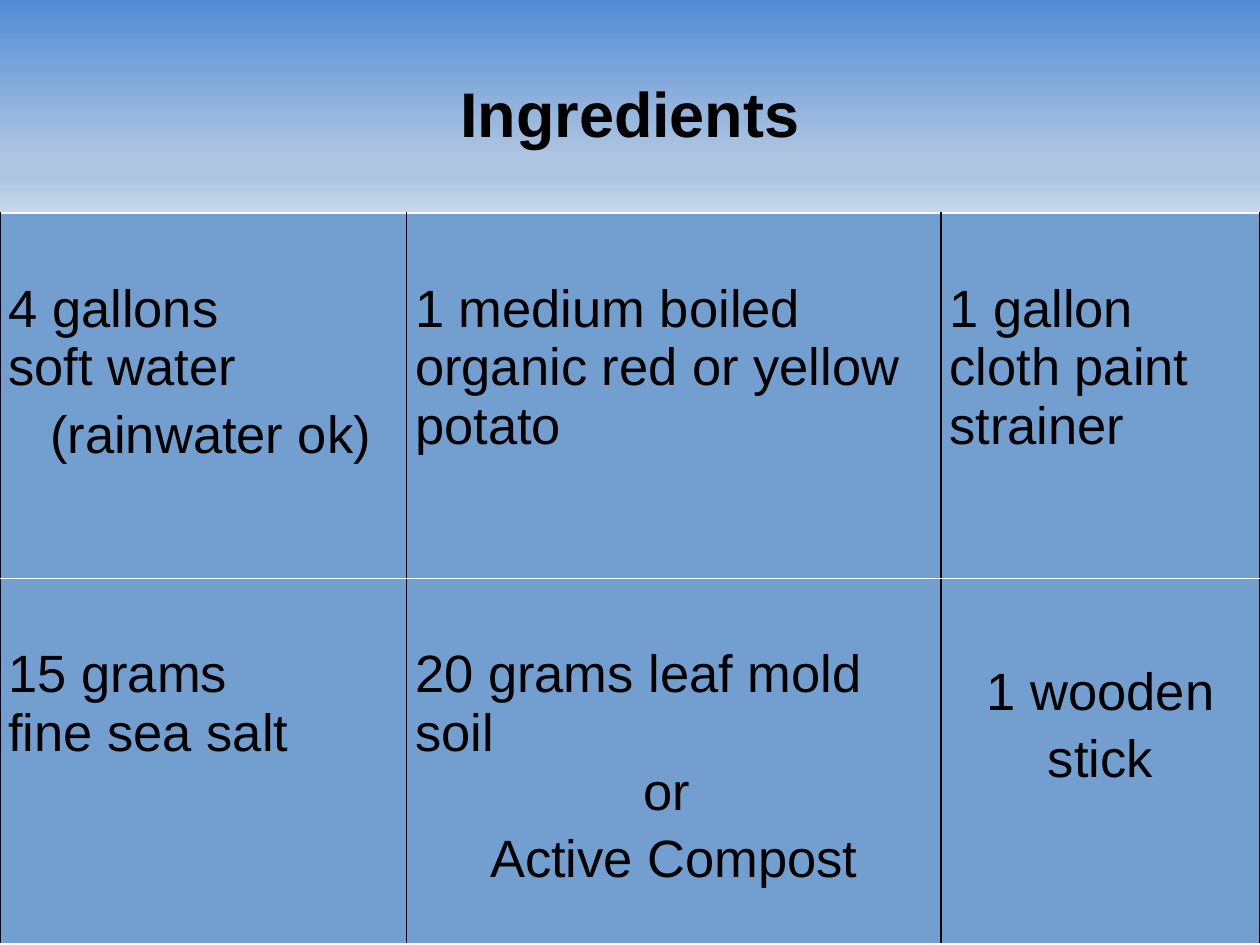
from lxml import etree
from pptx import Presentation
from pptx.dml.color import RGBColor
from pptx.enum.text import MSO_ANCHOR, MSO_AUTO_SIZE, PP_ALIGN
from pptx.oxml import parse_xml
from pptx.util import Cm, Pt

LEFT, CENTER = PP_ALIGN.LEFT, PP_ALIGN.CENTER
MIDDLE, NO_AUTOFIT = MSO_ANCHOR.MIDDLE, MSO_AUTO_SIZE.NONE
TITLE_ONLY = 5
NS = "http://schemas.openxmlformats.org/drawingml/2006/main"

COLORS = {"text": "000000", "cell": "729FCF", "side": "000000", "row": "FFFFFF"}
GRADIENT = [(0, "538CD5"), (74, "AEC5E1"), (83, "AEC5E1"), (100, "C8D8EB")]

TITLE = "Ingredients"
INGREDIENTS = [
    [
        [("4 gallons", LEFT, 1), ("soft water", LEFT, 1), (" (rainwater ok)", CENTER, 1.15)],
        [("1 medium boiled", LEFT, 1), ("organic red or yellow potato", LEFT, 1)],
        [("1 gallon cloth paint strainer", LEFT, 1)],
    ],
    [
        [("15 grams", LEFT, 1), ("fine sea salt", LEFT, 1)],
        [("20 grams leaf mold soil", LEFT, 1), ("or ", CENTER, 1), ("Active Compost", CENTER, 1.15)],
        [("1 wooden stick", CENTER, 1.15)],
    ],
]

SLIDE_WIDTH, SLIDE_HEIGHT = Cm(25.4), Cm(19.05)
TITLE_HEIGHT = Cm(4.29)
COLUMN_WIDTHS = [Cm(8.2), Cm(10.77), Cm(6.43)]
ROW_HEIGHT = Cm(7.37)
TOP_MARGINS = {1: Cm(1.35), 1.15: Cm(1.52)}
BORDERS = {"lnL": "side", "lnR": "side", "lnT": "row", "lnB": "row"}

TITLE_BOX = {"left": 0, "top": 0, "width": SLIDE_WIDTH, "height": TITLE_HEIGHT}
TITLE_FRAME = {
    "word_wrap": True, "auto_size": NO_AUTOFIT, "vertical_anchor": MIDDLE,
    "margin_left": Cm(0.25), "margin_right": Cm(0.25),
    "margin_top": Cm(0.25), "margin_bottom": Cm(0.25),
}
CELL_MARGINS = {"margin_left": Cm(0.17), "margin_right": Cm(0.17), "margin_bottom": Cm(0.13)}
TITLE_FONT = {"name": "Arial", "size": Pt(36), "bold": True}
CELL_FONT = {"name": "Arial", "size": Pt(30), "bold": False}


def apply(target, values):
    for key, value in values.items():
        setattr(target, key, value)


def write(paragraph, text, align, spacing, font):
    apply(paragraph, {"alignment": align, "line_spacing": spacing,
                      "space_before": Pt(0), "space_after": Pt(0)})
    run = paragraph.add_run()
    run.text = text
    apply(run.font, font)
    run.font.color.rgb = RGBColor.from_string(COLORS["text"])


def fill_gradient(shape):
    stops = "".join(
        f'<a:gs pos="{position * 1000}"><a:srgbClr val="{color}"/></a:gs>'
        for position, color in GRADIENT
    )
    gradient = parse_xml(
        f'<a:gradFill xmlns:a="{NS}" rotWithShape="1"><a:gsLst>{stops}</a:gsLst>'
        '<a:lin ang="5400000" scaled="0"/></a:gradFill>'
    )
    shape._element.spPr.append(gradient)


def add_borders(cell):
    properties = cell._tc.get_or_add_tcPr()
    for side, color in BORDERS.items():
        line = etree.SubElement(properties, f"{{{NS}}}{side}", w=str(Pt(0.96)))
        solid = etree.SubElement(line, f"{{{NS}}}solidFill")
        etree.SubElement(solid, f"{{{NS}}}srgbClr", val=COLORS[color])


def add_title(slide):
    title = slide.shapes.title
    apply(title, TITLE_BOX)
    apply(title.text_frame, TITLE_FRAME)
    fill_gradient(title)
    write(title.text_frame.paragraphs[0], TITLE, CENTER, 1.15, TITLE_FONT)


def fill_cell(cell, lines):
    apply(cell, CELL_MARGINS)
    cell.margin_top = TOP_MARGINS[lines[0][2]]
    add_borders(cell)
    cell.fill.solid()
    cell.fill.fore_color.rgb = RGBColor.from_string(COLORS["cell"])
    for index, (text, align, spacing) in enumerate(lines):
        frame = cell.text_frame
        paragraph = frame.add_paragraph() if index else frame.paragraphs[0]
        write(paragraph, text, align, spacing, CELL_FONT)


def add_ingredients(slide):
    rows = len(INGREDIENTS)
    table = slide.shapes.add_table(
        rows, len(COLUMN_WIDTHS), 0, TITLE_HEIGHT, SLIDE_WIDTH, ROW_HEIGHT * rows
    ).table
    apply(table, {"first_row": False, "horz_banding": False})
    for column, width in zip(table.columns, COLUMN_WIDTHS):
        column.width = width
    for row, contents in zip(table.rows, INGREDIENTS):
        row.height = ROW_HEIGHT
        for cell, lines in zip(row.cells, contents):
            fill_cell(cell, lines)


def main():
    deck = Presentation()
    apply(deck, {"slide_width": SLIDE_WIDTH, "slide_height": SLIDE_HEIGHT})
    slide = deck.slides.add_slide(deck.slide_layouts[TITLE_ONLY])
    add_title(slide)
    add_ingredients(slide)
    deck.save("out.pptx")


if __name__ == "__main__":
    main()
